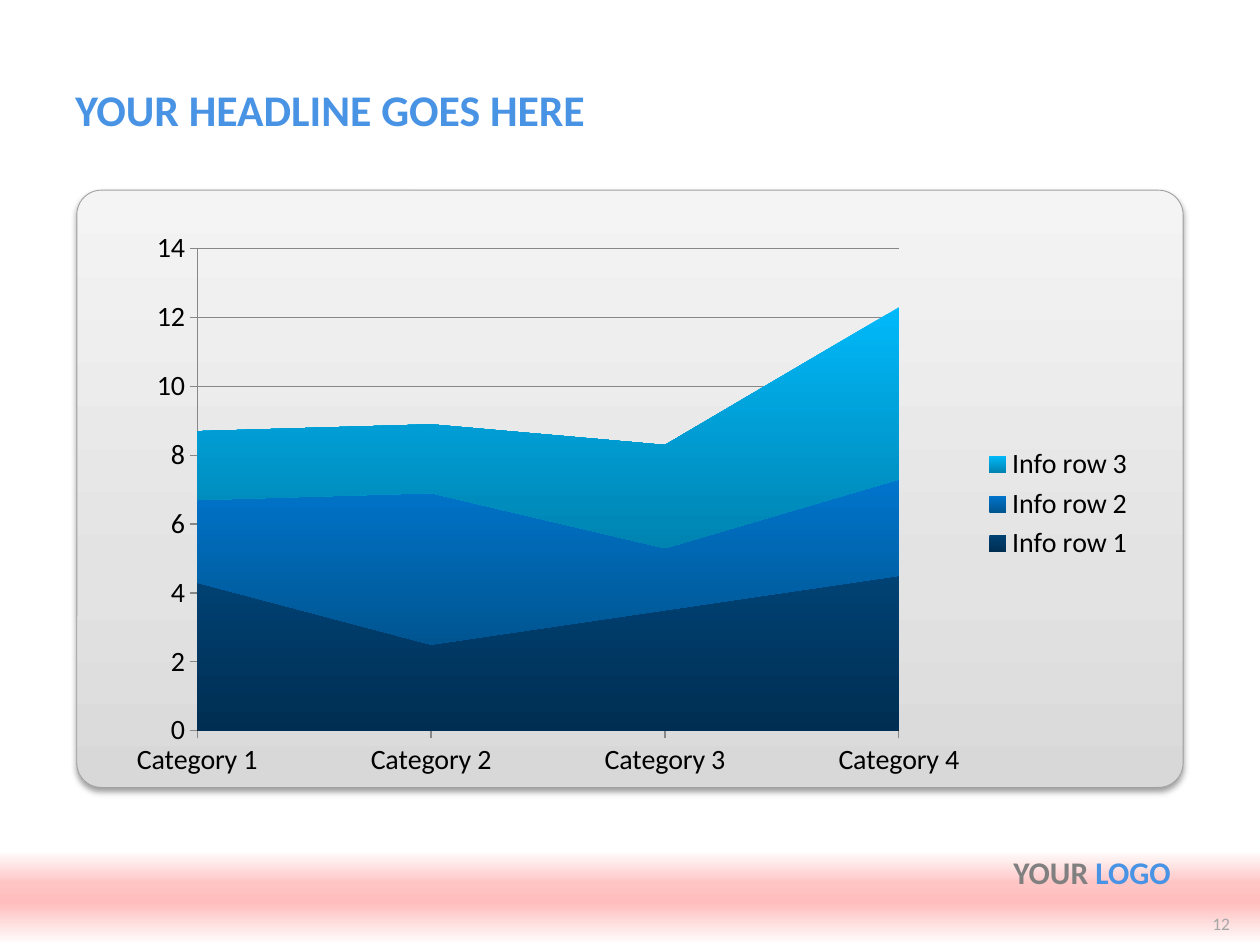
from lxml import etree
from pptx import Presentation
from pptx.chart.data import CategoryChartData
from pptx.dml.color import RGBColor
from pptx.enum.chart import XL_CHART_TYPE, XL_LEGEND_POSITION, XL_TICK_MARK
from pptx.enum.shapes import MSO_SHAPE
from pptx.enum.text import MSO_ANCHOR, PP_ALIGN
from pptx.oxml import parse_xml
from pptx.oxml.ns import nsdecls, qn
from pptx.util import Emu, Pt

PX = 9144  # 100 px to the inch
FONT = "Calibri"
BLUE, GREY = "4993E5", "808080"
CATEGORIES = [f"Category {n}" for n in range(1, 5)]
# name, values, top colour, bottom colour
SERIES = [
    ("Info row 1", (4.3, 2.5, 3.5, 4.5), "004274", "002E52"),
    ("Info row 2", (2.4, 4.4, 1.8, 2.8), "0075CC", "005591"),
    ("Info row 3", (2, 2, 3, 5), "00B9FA", "0083B0"),
]


def px(*lengths):
    return [Emu(n * PX) for n in lengths]


def rgb(value):
    return RGBColor.from_string(value)


def set_gradient(fill, parent, stops):
    """Fill from top to bottom with (percent, colour) stops."""
    fill.gradient()
    fill.gradient_angle = 270
    gs_lst = next(parent.iter(qn("a:gsLst")))
    for gs in list(gs_lst):
        gs_lst.remove(gs)
    for percent, color in stops:
        gs = etree.SubElement(gs_lst, qn("a:gs"), pos=str(percent * 1000))
        etree.SubElement(gs, qn("a:srgbClr"), val=color)


def set_font(font, size, color, bold=False):
    font.name, font.size, font.bold = FONT, Pt(size), bold
    font.color.rgb = rgb(color)


def add_text(s, box, parts, size, bold=False, align=PP_ALIGN.LEFT, anchor=MSO_ANCHOR.TOP):
    tf = s.shapes.add_textbox(*px(*box)).text_frame
    tf.word_wrap = True
    tf.vertical_anchor = anchor
    p = tf.paragraphs[0]
    p.alignment = align
    for text, color in parts:
        r = p.add_run()
        r.text = text
        set_font(r.font, size, color, bold)


def add_panel(s, box):
    sp = s.shapes.add_shape(MSO_SHAPE.ROUNDED_RECTANGLE, *px(*box))
    sp.adjustments[0] = 0.041
    set_gradient(sp.fill, sp._element, [(0, "F4F4F4"), (65, "E3E3E3"), (100, "D8D8D8")])
    sp.line.color.rgb = rgb("A1A1A1")
    sp.line.width = Pt(0.5)
    sp._element.spPr.append(parse_xml(
        f'<a:effectLst {nsdecls("a")}><a:outerShdw blurRad="44450" dist="25400" dir="5400000" '
        'rotWithShape="0"><a:srgbClr val="000000"><a:alpha val="38000"/></a:srgbClr>'
        '</a:outerShdw></a:effectLst>'))


def add_chart(s, box):
    data = CategoryChartData()
    data.categories = CATEGORIES
    for name, values, *_ in SERIES:
        data.add_series(name, values)
    chart = s.shapes.add_chart(XL_CHART_TYPE.AREA_STACKED, *px(*box), data).chart
    chart.has_title = False
    set_font(chart.font, 18, "000000")
    for series, (_, _, top, bottom) in zip(chart.plots[0].series, SERIES):
        set_gradient(series.format.fill, series._element, [(0, top), (100, bottom)])

    # Axes
    value_axis = chart.value_axis
    for axis in (chart.category_axis, value_axis):
        axis.major_tick_mark = XL_TICK_MARK.OUTSIDE
        axis.minor_tick_mark = XL_TICK_MARK.NONE
        axis.format.line.color.rgb = rgb("878787")
        set_font(axis.tick_labels.font, 16, "000000")
    chart.category_axis.has_major_gridlines = False
    value_axis.minimum_scale, value_axis.maximum_scale, value_axis.major_unit = 0, 14, 2
    value_axis.has_major_gridlines = True
    value_axis.major_gridlines.format.line.color.rgb = rgb("878787")
    value_axis._element.find(qn("c:crossBetween")).set("val", "midCat")

    # Legend
    chart.has_legend = True
    chart.legend.position = XL_LEGEND_POSITION.RIGHT
    chart.legend.include_in_layout = False
    set_font(chart.legend.font, 16, "000000")

    # Plot area as fractions of the chart box
    plot_area = chart._chartSpace.chart.plotArea
    for old in plot_area.findall(qn("c:layout")):
        plot_area.remove(old)
    layout = etree.Element(qn("c:layout"))
    manual = etree.SubElement(layout, qn("c:manualLayout"))
    for tag, val in (("layoutTarget", "inner"), ("xMode", "edge"), ("yMode", "edge"),
                     ("x", "0.08"), ("y", "0.05"), ("w", "0.68"), ("h", "0.85")):
        etree.SubElement(manual, qn(f"c:{tag}"), val=val)
    plot_area.insert(0, layout)


def add_footer(s, box):
    left, top, width, height = box
    band = s.shapes.add_shape(MSO_SHAPE.RECTANGLE, *px(*box))
    band.shadow.inherit = False
    band.line.fill.background()
    set_gradient(band.fill, band._element,
                 [(0, "FFFFFF"), (35, "FFC4C4"), (55, "FFBDBD"), (100, "FFFFFF")])
    add_text(s, (left + 50, top - 3, width - 111, 55), [("YOUR", GREY), (" LOGO", BLUE)],
             18, bold=True, align=PP_ALIGN.RIGHT)
    add_text(s, (left + width - 61, top + height - 30, 47, 30), [("12", "A6A6A6")],
             10, align=PP_ALIGN.RIGHT)


def main():
    prs = Presentation()
    prs.slide_width, prs.slide_height = px(1000, 750)
    s = prs.slides.add_slide(prs.slide_layouts[6])
    add_panel(s, (61, 151, 878, 474))
    add_text(s, (50, 59, 900, 55), [("YOUR HEADLINE GOES HERE", BLUE)], 25,
             bold=True, anchor=MSO_ANCHOR.MIDDLE)
    add_chart(s, (91, 175, 819, 450))
    add_footer(s, (0, 675, 1000, 75))
    prs.save("out.pptx")


if __name__ == "__main__":
    main()
